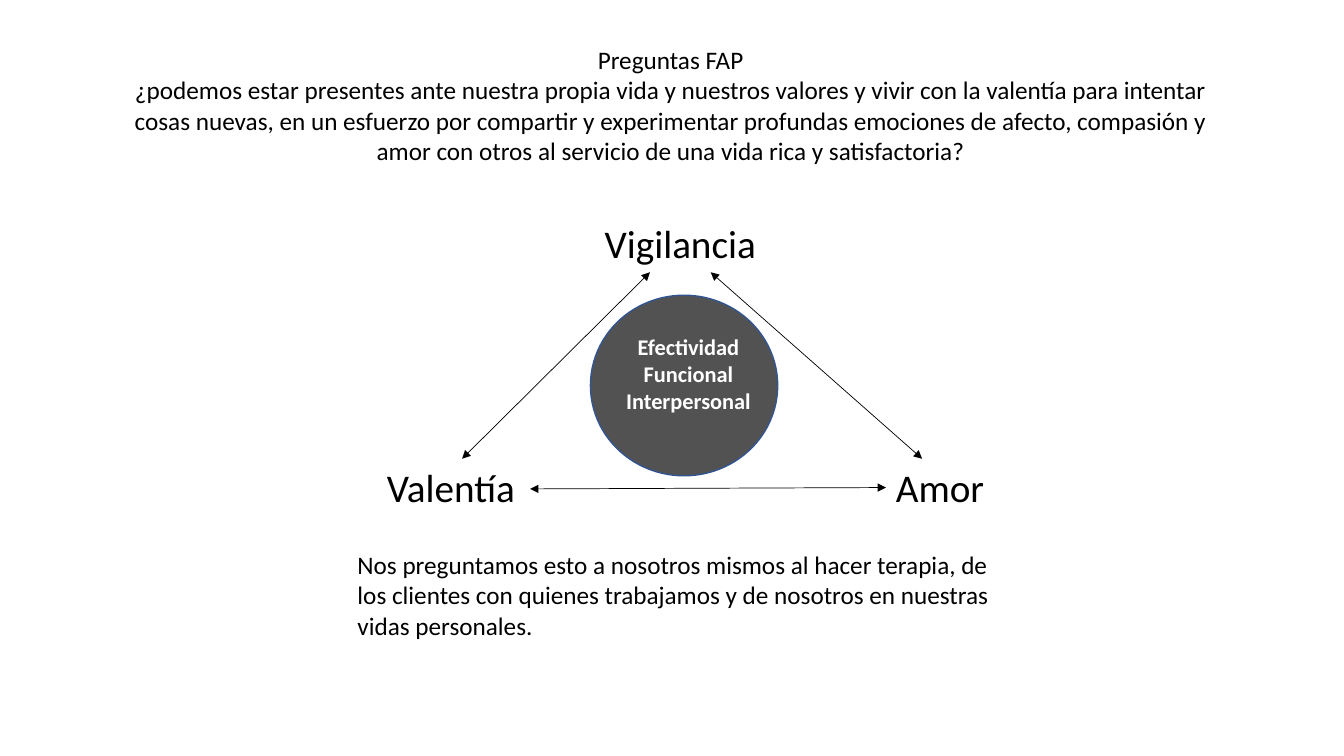
from lxml import etree
from pptx import Presentation
from pptx.dml.color import RGBColor
from pptx.enum.shapes import MSO_CONNECTOR, MSO_SHAPE
from pptx.enum.text import MSO_ANCHOR, MSO_AUTO_SIZE, PP_ALIGN
from pptx.oxml.ns import qn
from pptx.util import Cm, Pt

BLACK = RGBColor(0x00, 0x00, 0x00)
WHITE = RGBColor(0xFF, 0xFF, 0xFF)
GRAY = RGBColor(0x52, 0x52, 0x52)
BLUE = RGBColor(0x32, 0x54, 0x91)

LEFT, CENTER = PP_ALIGN.LEFT, PP_ALIGN.CENTER
TOP = MSO_ANCHOR.TOP
GROW = MSO_AUTO_SIZE.SHAPE_TO_FIT_TEXT
STRAIGHT = MSO_CONNECTOR.STRAIGHT
OVAL = MSO_SHAPE.OVAL
TOP_SIDE, LEFT_SIDE = 0, 1


class SlideBuilder:
    """Holds the text style and the current slide, and adds its elements."""

    font_name = "Calibri"

    def __init__(self, slide):
        self.slide = slide

    def fill_text(self, holder, lines, size, color=BLACK, align=LEFT, bold=False):
        frame = holder.text_frame
        frame.word_wrap = True
        frame.auto_size = GROW
        frame.vertical_anchor = TOP
        frame.text = "\n".join(lines)
        for paragraph in frame.paragraphs:
            paragraph.alignment = align
            font = paragraph.font
            font.name = self.font_name
            font.size = Pt(size)
            font.bold = bold
            font.color.rgb = color

    def title(self, lines, left, top, width, height, size):
        heading = self.slide.shapes.title
        heading.left, heading.top = Cm(left), Cm(top)
        heading.width, heading.height = Cm(width), Cm(height)
        self.fill_text(heading, lines, size, align=CENTER)

    def text(self, lines, left, top, width, height, size, **style):
        box = self.slide.shapes.add_textbox(Cm(left), Cm(top), Cm(width), Cm(height))
        self.fill_text(box, lines, size, **style)
        return box

    def circle(self, left, top, width, height):
        disc = self.slide.shapes.add_shape(OVAL, Cm(left), Cm(top), Cm(width), Cm(height))
        disc.shadow.inherit = False
        disc.fill.solid()
        disc.fill.fore_color.rgb = GRAY
        disc.line.color.rgb = BLUE
        disc.line.width = Pt(1)

    def double_arrow(self, start, end):
        arrow = self.slide.shapes.add_connector(STRAIGHT, *map(Cm, start + end))
        arrow.line.color.rgb = BLACK
        arrow.line.width = Pt(0.5)
        properties = arrow.element.spPr
        outline = properties.find(qn("a:ln"))
        for tag in ("a:headEnd", "a:tailEnd"):
            etree.SubElement(outline, qn(tag), type="triangle")
        etree.SubElement(properties, qn("a:effectLst"))
        return arrow


def main():
    presentation = Presentation()
    presentation.slide_width, presentation.slide_height = Cm(33.87), Cm(19.05)
    title_only = presentation.slide_layouts[5]
    builder = SlideBuilder(presentation.slides.add_slide(title_only))

    builder.title(
        [
            "Preguntas FAP",
            "¿podemos estar presentes ante nuestra propia vida y nuestros valores y "
            "vivir con la valentía para intentar cosas nuevas, en un esfuerzo por "
            "compartir y experimentar profundas emociones de afecto, compasión y "
            "amor con otros al servicio de una vida rica y satisfactoria?",
        ],
        2.79, 0.99, 28.22, 3.33, 18,
    )

    builder.text(["Vigilancia"], 14.99, 5.41, 4.5, 1.45, 28)
    courage = builder.text(["Valentía"], 9.5, 11.56, 4.29, 1.45, 28)
    love = builder.text(["Amor"], 22.33, 11.56, 2.95, 1.45, 28)

    courage_awareness = builder.double_arrow((11.66, 11.56), (16.38, 6.86))
    courage_awareness.begin_connect(courage, TOP_SIDE)
    builder.double_arrow((17.91, 6.86), (23.24, 11.56))
    courage_love = builder.double_arrow((13.36, 12.32), (22.33, 12.27))
    courage_love.end_connect(love, LEFT_SIDE)

    builder.text(
        [
            "Nos preguntamos esto a nosotros mismos al hacer terapia, de los clientes "
            "con quienes trabajamos y de nosotros en nuestras vidas personales."
        ],
        8.76, 13.72, 17.09, 2.57, 18,
    )

    builder.circle(14.88, 7.44, 4.72, 4.55)
    builder.text(
        ["Efectividad", "Funcional", "Interpersonal"],
        14.99, 8.28, 4.72, 2.31, 16, color=WHITE, align=CENTER, bold=True,
    )

    presentation.save("out.pptx")


if __name__ == "__main__":
    main()
